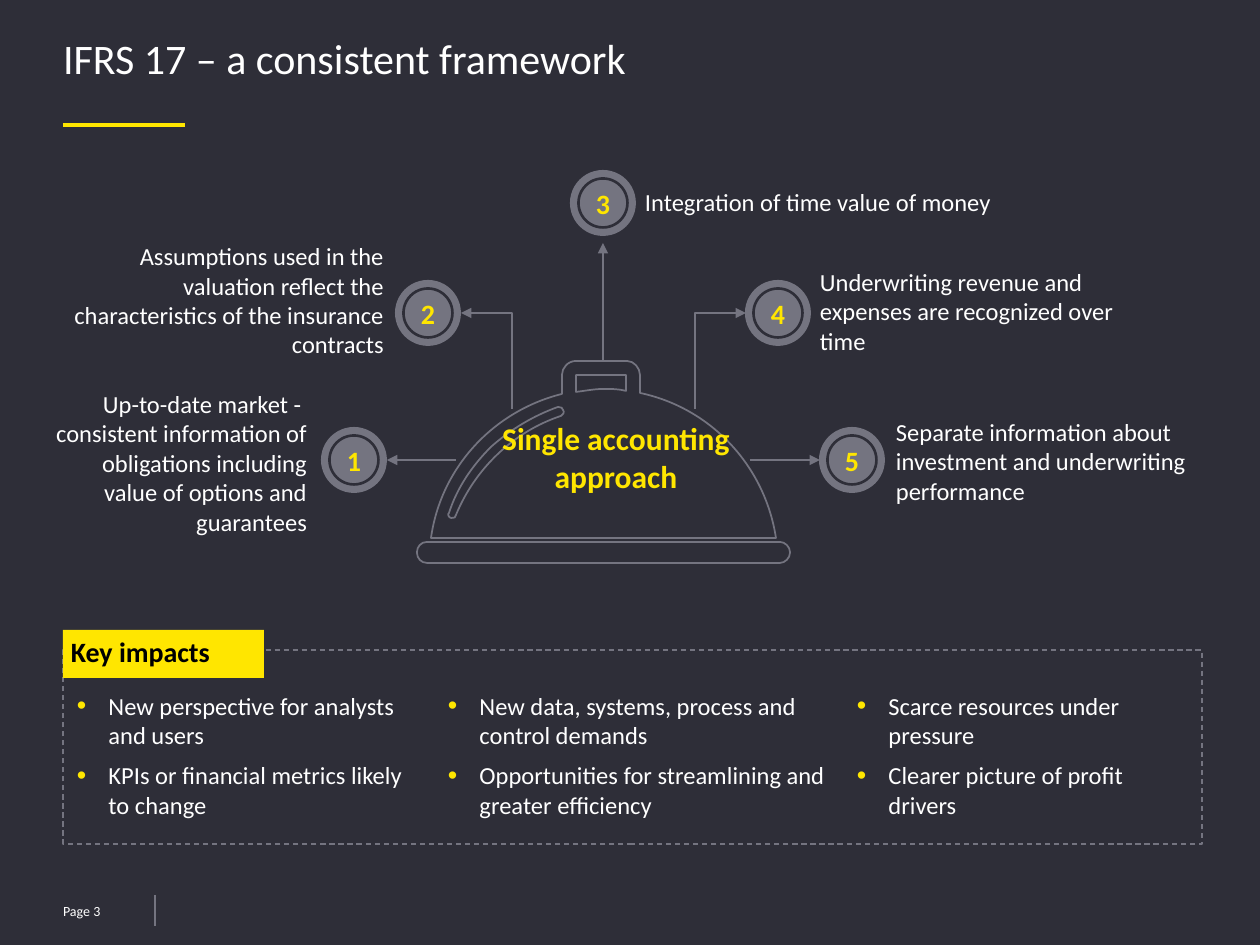
import lxml.etree
import pptx
import pptx.dml.color
import pptx.enum.dml
import pptx.enum.shapes
import pptx.enum.text
import pptx.oxml.ns
import pptx.util

SCALE = 914400 / 126
FONT = "Calibri"
NIGHT = pptx.dml.color.RGBColor(0x2E, 0x2E, 0x38)
GREY = pptx.dml.color.RGBColor(0x74, 0x74, 0x80)
YELLOW = pptx.dml.color.RGBColor(0xFF, 0xE6, 0x00)
WHITE = pptx.dml.color.RGBColor(0xFF, 0xFF, 0xFF)
BLACK = pptx.dml.color.RGBColor(0x00, 0x00, 0x00)

ALIGN = pptx.enum.text.PP_ALIGN
ANCHOR = pptx.enum.text.MSO_ANCHOR
SHAPE = pptx.enum.shapes.MSO_SHAPE
CONNECTOR = pptx.enum.shapes.MSO_CONNECTOR
qn = pptx.oxml.ns.qn

PRINCIPLES = [
    ("1", (354, 460), (49, 388, 258, 149), ALIGN.RIGHT,
     "Up-to-date market -  consistent information of obligations including value of options and guarantees"),
    ("2", (428, 313), (70, 241, 314, 118), ALIGN.RIGHT,
     "Assumptions used in the valuation reflect the characteristics of the insurance contracts"),
    ("3", (603, 203), (645, 187, 400, 30), ALIGN.LEFT,
     "Integration of time value of money"),
    ("4", (778, 313), (820, 266, 320, 90), ALIGN.LEFT,
     "Underwriting revenue and expenses are recognized over time"),
    ("5", (852, 460), (896, 416, 301, 90), ALIGN.LEFT,
     "Separate information about investment and underwriting performance"),
]

IMPACTS = [
    ((77, 691, 344, 108), ["New perspective for analysts and users",
                           "KPIs or financial metrics likely to change"]),
    ((448, 691, 383, 130), ["New data, systems, process and control demands",
                            "Opportunities for streamlining and greater efficiency"]),
    ((857, 691, 325, 127), ["Scarce resources under pressure",
                            "Clearer picture of profit drivers"]),
]

CLOCHE = [
    [(790, 553), (790, 558, 785, 563, 780, 563), (427, 563),
     (421, 563, 417, 558, 417, 553), (417, 552), (417, 547, 421, 542, 427, 542),
     (780, 542), (785, 542, 790, 547, 790, 552)],
    [(776, 538), (431, 538), (441, 467, 494, 411, 562, 394), (562, 375),
     (562, 368, 568, 361, 576, 361), (627, 361), (634, 361, 640, 368, 640, 375),
     (640, 393), (711, 408, 765, 466, 776, 538)],
    [(563, 410), (563, 408, 561, 407, 558, 407), (533, 416, 510, 430, 491, 447),
     (472, 466, 457, 488, 449, 513), (447, 514, 449, 518, 451, 518), (452, 518),
     (454, 518, 456, 518, 456, 515), (475, 469, 513, 432, 561, 416),
     (563, 415, 565, 412, 563, 410)],
    [(626, 375), (576, 375), (576, 392), (585, 391, 594, 389, 604, 389),
     (611, 389, 619, 389, 626, 391)],
]


def px(length):
    return pptx.util.Emu(round(length * SCALE))


def place(shape, bounds):
    shape.left, shape.top, shape.width, shape.height = map(px, bounds)


def prepare_frame(shape, anchor):
    frame = shape.text_frame
    frame.word_wrap = True
    frame.auto_size = pptx.enum.text.MSO_AUTO_SIZE.NONE
    frame.vertical_anchor = anchor
    frame.margin_left = frame.margin_right = frame.margin_top = frame.margin_bottom = 0
    return frame


def style_spans(paragraph, size, color, bold):
    for span in paragraph.runs:
        span.font.name = FONT
        span.font.size = pptx.util.Pt(size)
        span.font.color.rgb = color
        span.font.bold = bold


def write(shape, text, size, color=WHITE, bold=False, align=ALIGN.LEFT,
          anchor=ANCHOR.TOP, spacing=None):
    frame = prepare_frame(shape, anchor)
    frame.text = text
    paragraph = frame.paragraphs[0]
    paragraph.alignment = align
    paragraph.line_spacing = spacing
    style_spans(paragraph, size, color, bold)


def add_label(page, bounds, text, size, **style):
    write(page.shapes.add_textbox(*map(px, bounds)), text, size, **style)


def style_shape(shape, fill=None, line=None, width=1):
    shape.shadow.inherit = False
    if fill is None:
        shape.fill.background()
    else:
        shape.fill.solid()
        shape.fill.fore_color.rgb = fill
    if line is None:
        shape.line.fill.background()
    else:
        shape.line.color.rgb = line
        shape.line.width = pptx.util.Pt(width)


def add_box(page, kind, bounds, **style):
    box = page.shapes.add_shape(kind, *map(px, bounds))
    style_shape(box, **style)
    return box


def add_line(page, start, end, color=GREY, width=1, arrow=False, kind=CONNECTOR.STRAIGHT):
    line = page.shapes.add_connector(kind, *map(px, (*start, *end)))
    line.line.color.rgb = color
    line.line.width = pptx.util.Pt(width)
    properties = line._element.spPr
    if arrow:
        lxml.etree.SubElement(properties.find(qn("a:ln")), qn("a:tailEnd"), type="triangle")
    lxml.etree.SubElement(properties, qn("a:effectLst"))
    return line


def add_elbow(page, start, end):
    side = 1 if end[0] > start[0] else -1
    center_x, center_y = (start[0] + end[0]) / 2, (start[1] + end[1]) / 2
    half_rise, half_run = abs(end[1] - start[1]) / 2, abs(end[0] - start[0]) / 2
    elbow = add_line(page, (center_x + side * half_rise, center_y + half_run),
                     (center_x - side * half_rise, center_y - half_run),
                     arrow=True, kind=CONNECTOR.ELBOW)
    properties = elbow._element.spPr
    properties.find(qn("a:prstGeom")).set("prst", "bentConnector2")
    properties.find(qn("a:xfrm")).set("rot", str(side * 90 % 360 * 60000))


def bend(shape, node, segment):
    curve = lxml.etree.Element(qn("a:cubicBezTo"))
    for x, y in zip(segment[::2], segment[1::2]):
        lxml.etree.SubElement(curve, qn("a:pt"), x=str(px(x) - shape.left), y=str(px(y) - shape.top))
    node.getparent().replace(node, curve)


def add_cloche(page):
    builder = page.shapes.build_freeform(*map(px, CLOCHE[0][0]))
    for contour in CLOCHE:
        corners = [tuple(map(px, segment[-2:])) for segment in contour]
        builder.move_to(*corners[0])
        builder.add_line_segments(corners[1:], close=True)
    cloche = builder.convert_to_shape()
    style_shape(cloche, line=GREY)
    segments = [segment for contour in CLOCHE for segment in contour[1:]]
    nodes = list(cloche._element.iter(qn("a:lnTo")))
    for node, segment in zip(nodes, segments):
        if len(segment) == 6:
            bend(cloche, node, segment)


def add_badge(page, center, number):
    def around(size):
        return center[0] - size / 2, center[1] - size / 2, size, size

    add_box(page, SHAPE.OVAL, around(66), fill=GREY)
    disc = add_box(page, SHAPE.OVAL, around(49), line=NIGHT, width=1.5)
    write(disc, number, 16, YELLOW, True, ALIGN.CENTER, ANCHOR.MIDDLE)


def add_bullet(paragraph):
    properties = paragraph._p.get_or_add_pPr()
    properties.set("marL", str(pptx.util.Inches(0.25)))
    properties.set("indent", str(-pptx.util.Inches(0.25)))
    color = lxml.etree.SubElement(properties, qn("a:buClr"))
    lxml.etree.SubElement(color, qn("a:srgbClr"), val=str(YELLOW))
    lxml.etree.SubElement(properties, qn("a:buSzPct"), val="110000")
    lxml.etree.SubElement(properties, qn("a:buChar"), char="•")


def fill_list(body, bounds, items):
    place(body, bounds)
    frame = prepare_frame(body, ANCHOR.TOP)
    frame.text = "\n".join(items)
    for paragraph in frame.paragraphs:
        add_bullet(paragraph)
        paragraph.space_before = pptx.util.Pt(0)
        paragraph.space_after = pptx.util.Pt(6)
        style_spans(paragraph, 14, WHITE, False)


def main():
    deck = pptx.Presentation()
    deck.slide_width, deck.slide_height = px(1260), px(945)
    page = deck.slides.add_slide(deck.slide_layouts.get_by_name("Comparison"))
    page.background.fill.solid()
    page.background.fill.fore_color.rgb = NIGHT

    title, *bodies = page.placeholders
    place(title, (63, 40, 1134, 82))
    write(title, "IFRS 17 – a consistent framework", 24, spacing=0.85)
    for body, (bounds, items) in zip(bodies, IMPACTS):
        fill_list(body, bounds, items)
    for body in bodies[len(IMPACTS):]:
        body._element.getparent().remove(body._element)

    add_line(page, (63, 125), (185, 125), YELLOW, 2.25)
    frame = add_box(page, SHAPE.RECTANGLE, (63, 650, 1139, 194), line=GREY, width=0.75)
    frame.line.dash_style = pptx.enum.dml.MSO_LINE.DASH
    add_box(page, SHAPE.RECTANGLE, (63, 630, 201, 48), fill=YELLOW)
    add_label(page, (71, 640, 183, 27), "Key impacts", 16, color=BLACK, bold=True, spacing=0.85)

    add_cloche(page)
    for number, center, bounds, align, text in PRINCIPLES:
        add_badge(page, center, number)
        add_label(page, bounds, text, 14, align=align, anchor=ANCHOR.MIDDLE)
    add_elbow(page, (512, 409), (461, 313))
    add_elbow(page, (695, 409), (746, 313))
    for start, end in [((456, 460), (387, 460)), ((603, 361), (603, 243)), ((750, 460), (820, 460))]:
        add_line(page, start, end, arrow=True)
    add_label(page, (497, 419, 238, 114), "Single accounting approach", 18,
              color=YELLOW, bold=True, align=ALIGN.CENTER)

    add_label(page, (63, 898, 92, 25), "Page 3", 8, anchor=ANCHOR.MIDDLE)
    add_line(page, (155, 895), (155, 926), width=0.75)
    deck.save("out.pptx")


if __name__ == "__main__":
    main()
